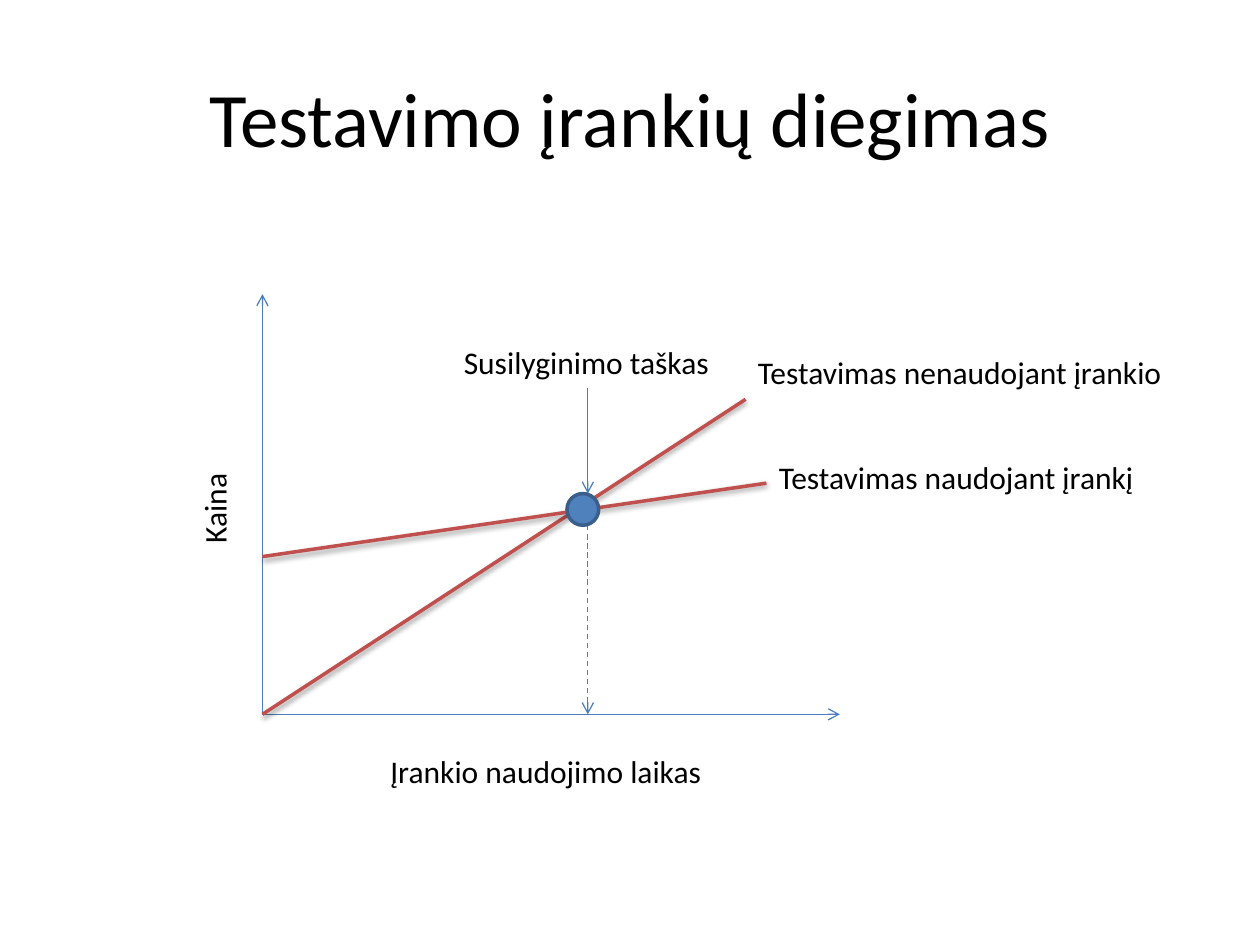
"""Build the cost-over-time slide about introducing testing tools."""
from dataclasses import dataclass

from lxml import etree
from pptx import Presentation
from pptx import util as u
from pptx.dml.color import RGBColor
from pptx.enum import dml, shapes, text
from pptx.oxml import parse_xml
from pptx.oxml.ns import nsdecls, qn


@dataclass(frozen=True)
class Theme:
    font: str = "Calibri"
    ink: str = "000000"
    axis: str = "4B7EBC"
    cost: str = "C0504D"
    point: str = "4F81BD"
    point_edge: str = "3A5F8C"
    title_size: int = 44
    label_size: int = 18
    thin: float = 0.75
    thick: float = 2


class Diagram:
    def __init__(self, slide, theme):
        self.slide = slide
        self.theme = theme

    def set_words(self, frame, words, size, align):
        frame.text = words
        paragraph = frame.paragraphs[0]
        paragraph.alignment = align
        font = paragraph.runs[0].font
        font.name = self.theme.font
        font.size = u.Pt(size)
        font.color.rgb = RGBColor.from_string(self.theme.ink)

    def title(self, words, left, top, width, height):
        heading = self.slide.shapes.title
        heading.left, heading.top = u.Cm(left), u.Cm(top)
        heading.width, heading.height = u.Cm(width), u.Cm(height)
        heading.text_frame.vertical_anchor = text.MSO_ANCHOR.MIDDLE
        self.set_words(heading.text_frame, words, self.theme.title_size, text.PP_ALIGN.CENTER)

    def label(self, words, left, top, width, height=1.02, upright=False):
        box = self.slide.shapes.add_textbox(*map(u.Cm, (left, top, width, height)))
        frame = box.text_frame
        frame.word_wrap = False
        frame.auto_size = text.MSO_AUTO_SIZE.SHAPE_TO_FIT_TEXT
        if upright:
            box.element.txBody.find(qn("a:bodyPr")).set("vert", "vert270")
        self.set_words(frame, words, self.theme.label_size, text.PP_ALIGN.LEFT)

    def line(self, start, end, color, weight):
        stroke = self.slide.shapes.add_connector(
            shapes.MSO_CONNECTOR.STRAIGHT, *map(u.Cm, (*start, *end)))
        stroke.line.color.rgb = RGBColor.from_string(color)
        stroke.line.width = u.Pt(weight)
        return stroke

    def arrow(self, start, end, dashed=False):
        stroke = self.line(start, end, self.theme.axis, self.theme.thin)
        if dashed:
            stroke.line.dash_style = dml.MSO_LINE.DASH
        outline = stroke.element.spPr.find(qn("a:ln"))
        etree.SubElement(outline, qn("a:tailEnd"), type="arrow")
        etree.SubElement(stroke.element.spPr, qn("a:effectLst"))

    def cost_line(self, start, end):
        stroke = self.line(start, end, self.theme.cost, self.theme.thick)
        stroke.element.spPr.append(parse_xml(
            f'<a:effectLst {nsdecls("a")}>'
            f'<a:outerShdw blurRad="{u.Pt(3.1)}" dist="{u.Pt(1.6)}" dir="5400000" rotWithShape="0">'
            f'<a:srgbClr val="{self.theme.ink}"><a:alpha val="38000"/></a:srgbClr>'
            '</a:outerShdw></a:effectLst>'))

    def point(self, left, top, size):
        dot = self.slide.shapes.add_shape(
            shapes.MSO_SHAPE.OVAL, *map(u.Cm, (left, top, size, size)))
        dot.shadow.inherit = False
        dot.fill.solid()
        dot.fill.fore_color.rgb = RGBColor.from_string(self.theme.point)
        dot.line.color.rgb = RGBColor.from_string(self.theme.point_edge)
        dot.line.width = u.Pt(self.theme.thick)


def main():
    deck = Presentation()
    deck.slide_width, deck.slide_height = u.Cm(25.4), u.Cm(19.05)
    diagram = Diagram(deck.slides.add_slide(deck.slide_layouts[5]), Theme())
    diagram.title("Testavimo įrankių diegimas", 1.27, 0.76, 22.86, 3.18)

    origin_x, origin_y = origin = (5.29, 14.4)
    break_even_x, break_even_top, point_size = 11.85, 9.95, 0.64
    diagram.arrow(origin, (origin_x, 5.93))
    diagram.arrow(origin, (16.93, origin_y))
    diagram.cost_line(origin, (15.03, 8.05))
    diagram.cost_line((origin_x, 11.22), (15.45, 9.74))
    diagram.label("Kaina", 3.81, 9.53, 1.27, 1.68, upright=True)
    diagram.label("Įrankio naudojimo laikas", 7.62, 15.03, 6.83)
    diagram.arrow((break_even_x, 7.82), (break_even_x, break_even_top))
    diagram.arrow((break_even_x, break_even_top + point_size),
                  (break_even_x, origin_y), dashed=True)
    diagram.label("Susilyginimo taškas", 9.1, 6.8, 5.51)
    diagram.point(11.43, break_even_top, point_size)
    diagram.label("Testavimas nenaudojant įrankio", 15.03, 6.99, 8.74)
    diagram.label("Testavimas naudojant įrankį", 15.45, 9.1, 7.75)
    deck.save("out.pptx")


if __name__ == "__main__":
    main()
